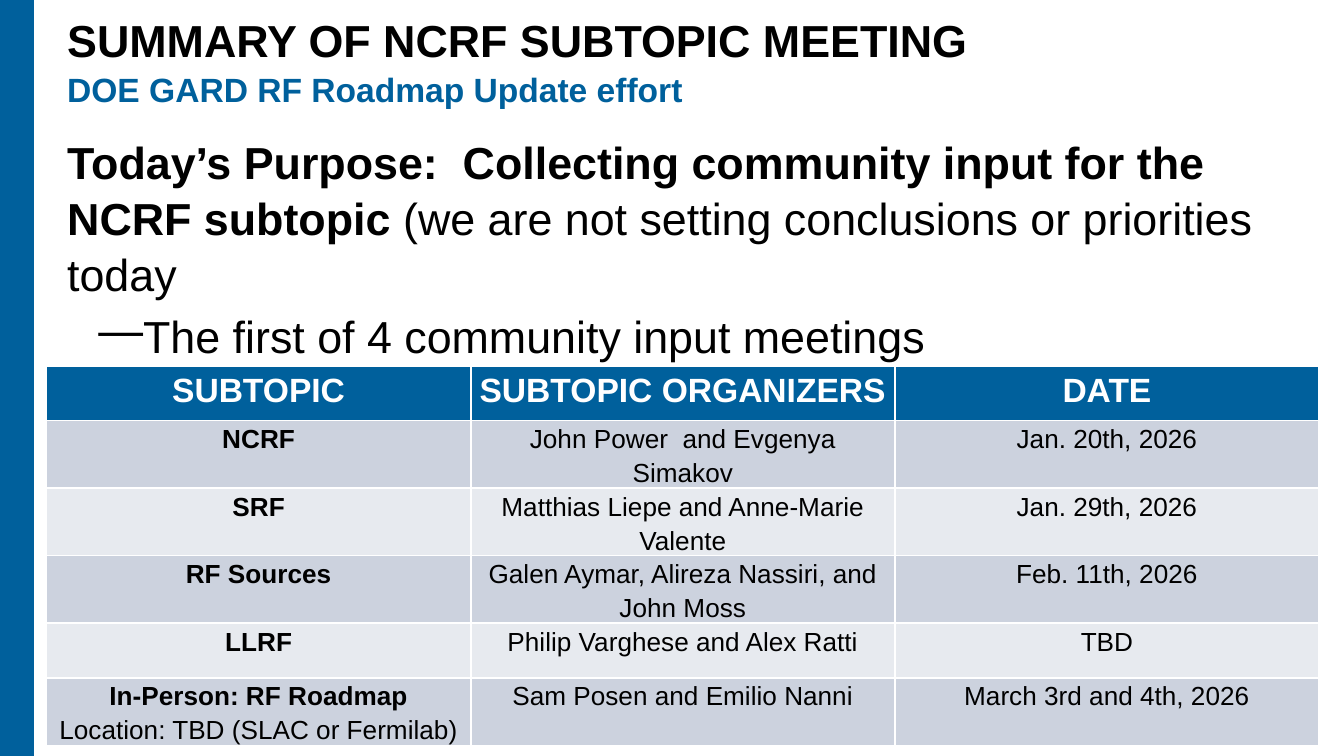
"""Build the NCRF subtopic meeting summary slide."""
from dataclasses import dataclass

from lxml import etree
from pptx import Presentation
from pptx import util as u
from pptx.dml import color as dml
from pptx.enum import shapes, text
from pptx.oxml import ns

BLUE, BLACK, WHITE = "00609C", "000000", "FFFFFF"
BANDS = ("CCD2DE", "E7EAEF")
FRAME = {
    "margin_left": 0, "margin_right": 0, "margin_top": 0, "margin_bottom": 0,
    "word_wrap": True, "auto_size": text.MSO_AUTO_SIZE.NONE,
}
CELL = {"margin_left": u.Cm(0.1), "margin_right": u.Cm(0.1), "margin_top": 0, "margin_bottom": 0}


@dataclass
class Run:
    words: str
    size: int
    bold: bool = False
    color: str = BLACK


@dataclass
class Box:
    left: float
    top: float
    width: float
    height: float

    def lengths(self) -> tuple:
        """Return the four lengths as Cm."""
        return tuple(u.Cm(value) for value in (self.left, self.top, self.width, self.height))


@dataclass
class Meeting:
    subtopic: str
    organizers: str
    date: str
    location: str = ""


MEETINGS = [
    Meeting("NCRF", "John Power  and Evgenya Simakov", "Jan. 20th, 2026"),
    Meeting("SRF", "Matthias Liepe and Anne-Marie Valente", "Jan. 29th, 2026"),
    Meeting("RF Sources", "Galen Aymar, Alireza Nassiri, and John Moss", "Feb. 11th, 2026"),
    Meeting("LLRF", "Philip Varghese and Alex Ratti", "TBD"),
    Meeting("In-Person: RF Roadmap", "Sam Posen and Emilio Nanni", "March 3rd and 4th, 2026",
            "Location: TBD (SLAC or Fermilab)"),
]


def rgb(value: str) -> dml.RGBColor:
    """Turn a hex string into a colour."""
    return dml.RGBColor.from_string(value)


def apply(target, values: dict) -> None:
    """Set every attribute named in the format values."""
    for name, value in values.items():
        setattr(target, name, value)


def fill(target, color: str) -> None:
    """Give a shape or cell a solid fill."""
    target.fill.solid()
    target.fill.fore_color.rgb = rgb(color)


def write(paragraph, runs: list[Run], **values) -> None:
    """Format a paragraph and add its runs."""
    apply(paragraph, values)
    for item in runs:
        run = paragraph.add_run()
        run.text = item.words
        apply(run.font, {"name": "Arial", "size": u.Pt(item.size), "bold": item.bold})
        run.font.color.rgb = rgb(item.color)


def write_lines(frame, lines: list[list[Run]], **values) -> None:
    """Write one paragraph for each list of runs."""
    for index, runs in enumerate(lines):
        paragraph = frame.add_paragraph() if index else frame.paragraphs[0]
        write(paragraph, runs, **values)


def add_text(slide, box: Box, lines: list[list[Run]]):
    """Add a wrapped text box and return its frame."""
    frame = slide.shapes.add_textbox(*box.lengths()).text_frame
    apply(frame, FRAME)
    write_lines(frame, lines, line_spacing=1.05)
    return frame


def add_dash(paragraph) -> None:
    """Give a paragraph a hanging dash bullet."""
    properties = paragraph._p.get_or_add_pPr()
    properties.set("marL", str(u.Cm(1.3)))
    properties.set("indent", str(-u.Cm(0.71)))
    etree.SubElement(properties, ns.qn("a:buChar")).set("char", "—")


def add_title(slide, box: Box, run: Run) -> None:
    """Place and format the title placeholder."""
    title = slide.shapes.title
    apply(title, dict(zip(("left", "top", "width", "height"), box.lengths())))
    apply(title.text_frame, FRAME | {"vertical_anchor": text.MSO_ANCHOR.BOTTOM})
    write(title.text_frame.paragraphs[0], [run], alignment=text.PP_ALIGN.LEFT, line_spacing=0.9)


def add_schedule(slide, box: Box, meetings: list[Meeting]) -> None:
    """Add the table of subtopics, organizers and dates."""
    headings = ("SUBTOPIC", "SUBTOPIC ORGANIZERS", "DATE")
    rows = [[[[Run(heading, 18, True, WHITE)]] for heading in headings]]
    for meeting in meetings:
        subtopic = [[Run(meeting.subtopic, 14, True)]]
        if meeting.location:
            subtopic.append([Run(meeting.location, 14)])
        rows.append([subtopic, [[Run(meeting.organizers, 14)]], [[Run(meeting.date, 14)]]])
    table = slide.shapes.add_table(len(rows), len(headings), *box.lengths()).table
    for row, contents in enumerate(rows):
        for column, lines in enumerate(contents):
            cell = table.cell(row, column)
            apply(cell, CELL)
            fill(cell, BANDS[(row - 1) % 2] if row else BLUE)
            write_lines(cell.text_frame, lines, alignment=text.PP_ALIGN.CENTER, line_spacing=1.15)


def main() -> None:
    """Build and save the presentation."""
    presentation = Presentation()
    apply(presentation, {"slide_width": u.Cm(25.4), "slide_height": u.Cm(14.29)})
    slide = presentation.slides.add_slide(presentation.slide_layouts[5])

    stripe = slide.shapes.add_shape(shapes.MSO_SHAPE.RECTANGLE, *Box(0, 0, 0.64, 14.29).lengths())
    stripe.shadow.inherit = False
    fill(stripe, BLUE)
    stripe.line.fill.background()

    add_title(slide, Box(1.27, 0.05, 23.3, 1.22), Run("SUMMARY OF NCRF SUBTOPIC MEETING", 24, True))
    add_text(slide, Box(1.27, 1.27, 17.35, 1.22),
             [[Run("DOE GARD RF Roadmap Update effort", 18, True, BLUE)]])
    purpose = add_text(slide, Box(1.27, 2.49, 23.88, 4.83), [
        [Run("Today’s Purpose:  Collecting community input for the NCRF subtopic ", 24, True),
         Run("(we are not setting conclusions or priorities today", 24)],
        [Run("The first of 4 community input meetings", 24)],
    ])
    purpose.paragraphs[1].space_before = u.Pt(3)
    add_dash(purpose.paragraphs[1])
    add_schedule(slide, Box(0.88, 6.92, 24.05, 6.18), MEETINGS)
    presentation.save("out.pptx")


if __name__ == "__main__":
    main()
